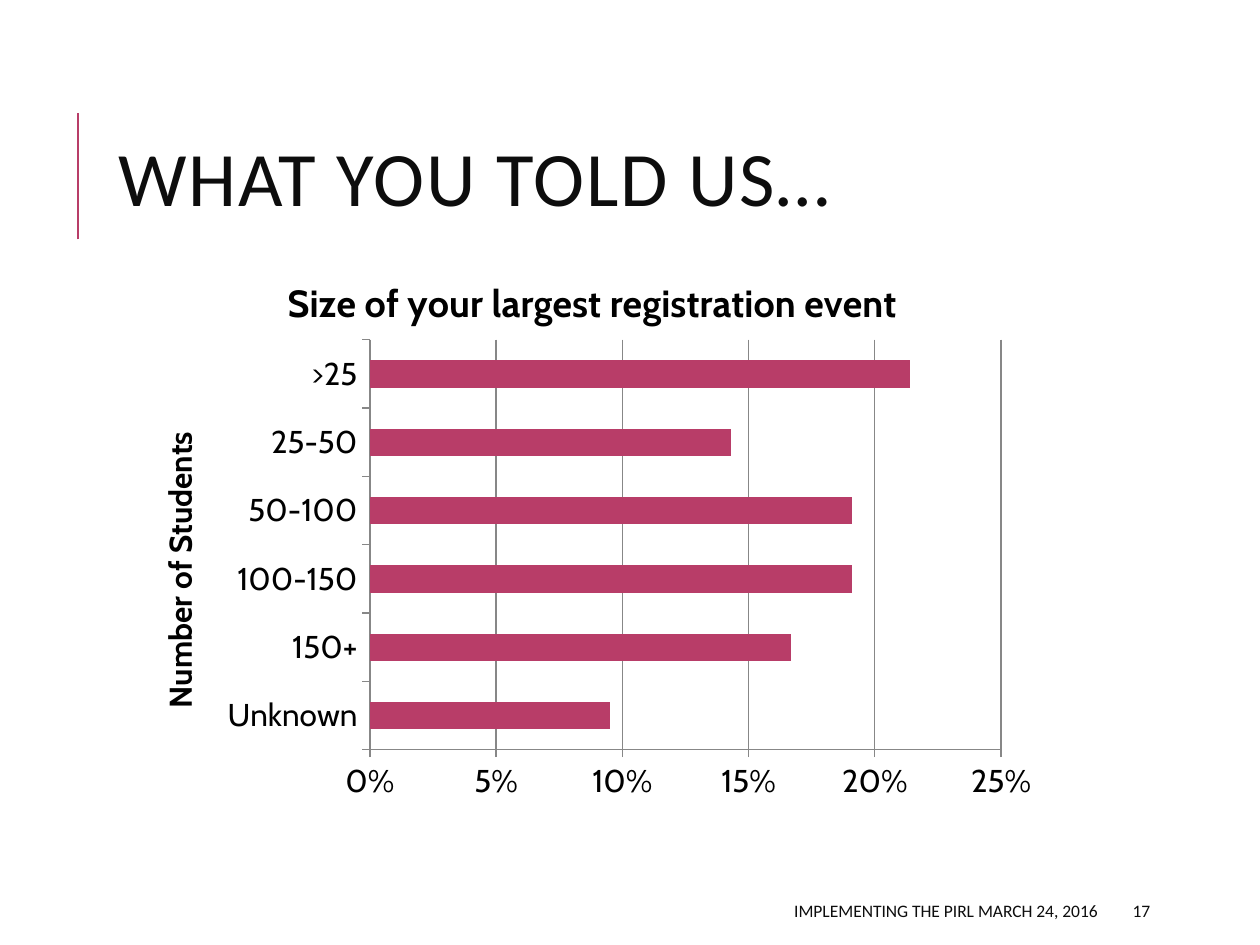
from dataclasses import dataclass

from lxml.etree import SubElement
from pptx import Presentation
from pptx.chart.data import CategoryChartData
from pptx.dml.color import RGBColor
from pptx.enum.chart import XL_CHART_TYPE as ChartType, XL_TICK_MARK as TickMark
from pptx.enum.shapes import MSO_CONNECTOR as Connector
from pptx.enum.text import MSO_ANCHOR as Anchor, MSO_AUTO_SIZE as AutoSize, PP_ALIGN as Align
from pptx.oxml import parse_xml
from pptx.oxml.ns import nsdecls, qn
from pptx.util import Inches, Pt

ACCENT, INK, BLACK, GRID = "B83D68", "0D0D0D", "000000", "878787"
TEXT_FONT, CHART_FONT = "Calibri", "Cabin"
EVENT_SIZES = {
    "Unknown": 0.095,
    "150+": 0.167,
    "100-150": 0.191,
    "50-100": 0.191,
    "25-50": 0.143,
    ">25": 0.214,
}
# Plot area as shares of the chart frame
PLOT_SHARES = {"x": 0.256, "y": 0.157, "w": 0.691, "h": 0.733}


@dataclass
class Box:
    left: float
    top: float
    width: float
    height: float

    def lengths(self) -> list:
        return [Inches(n) for n in (self.left, self.top, self.width, self.height)]


@dataclass
class FooterItem:
    text: str
    box: Box
    align: Align


FOOTER = [
    FooterItem("IMPLEMENTING THE PIRL MARCH 24, 2016", Box(3.97, 7.08, 4.84, 0.3), Align.RIGHT),
    FooterItem("17", Box(8.89, 7.08, 0.8, 0.3), Align.LEFT),
]


def color(value: str) -> RGBColor:
    return RGBColor.from_string(value)


def style_font(font, name: str, size: float, value: str, bold: bool = False) -> None:
    font.name, font.size, font.bold = name, Pt(size), bold
    font.color.rgb = color(value)


def add_title(slide, text: str) -> None:
    title = slide.shapes.title
    title.left, title.top, title.width, title.height = Box(0.84, 0.64, 7.97, 1.64).lengths()
    frame = title.text_frame
    frame.text = text
    frame.word_wrap, frame.auto_size = True, AutoSize.NONE
    frame.vertical_anchor = Anchor.MIDDLE
    paragraph = frame.paragraphs[0]
    paragraph.alignment, paragraph.line_spacing = Align.LEFT, 0.8
    run = paragraph.runs[0]
    style_font(run.font, TEXT_FONT, 44, INK)
    run.font._element.set("spc", "100")


def add_accent_line(slide) -> None:
    line = slide.shapes.add_connector(
        Connector.STRAIGHT, Inches(0.62), Inches(1.9), Inches(0.62), Inches(0.9))
    line.line.color.rgb, line.line.width = color(ACCENT), Pt(1.5)
    SubElement(line._element.spPr, qn("a:effectLst"))


def add_footer_item(slide, item: FooterItem) -> None:
    frame = slide.shapes.add_textbox(*item.box.lengths()).text_frame
    frame.word_wrap, frame.vertical_anchor = True, Anchor.MIDDLE
    frame.text = item.text
    paragraph = frame.paragraphs[0]
    paragraph.alignment = item.align
    style_font(paragraph.runs[0].font, TEXT_FONT, 10, INK)


def set_heading(owner, text: str, size: float) -> None:
    """Give a chart or an axis a bold title."""
    title = owner.chart_title if hasattr(owner, "chart_title") else owner.axis_title
    title.text_frame.text = text
    run = title.text_frame.paragraphs[0].runs[0]
    style_font(run.font, CHART_FONT, size, BLACK, bold=True)


def set_plot_layout(chart) -> None:
    plot_area = chart._chartSpace.chart.plotArea
    for layout in plot_area.findall(qn("c:layout")):
        plot_area.remove(layout)
    shares = "".join(f'<c:{key} val="{share}"/>' for key, share in PLOT_SHARES.items())
    plot_area.insert(0, parse_xml(
        f'<c:layout {nsdecls("c")}><c:manualLayout><c:layoutTarget val="inner"/>'
        f'<c:xMode val="edge"/><c:yMode val="edge"/>{shares}</c:manualLayout></c:layout>'))


def add_event_chart(slide) -> None:
    data = CategoryChartData(number_format="0%")
    data.categories = list(EVENT_SIZES)
    data.add_series("Series 1", list(EVENT_SIZES.values()))
    chart = slide.shapes.add_chart(
        ChartType.BAR_CLUSTERED, *Box(1.08, 2, 7.25, 4.44).lengths(), data).chart
    style_font(chart.font, CHART_FONT, 18, BLACK)
    chart.has_legend = False
    set_heading(chart, "Size of your largest registration event", 21.6)
    set_plot_layout(chart)

    # Bars
    plot = chart.plots[0]
    plot.gap_width, plot.vary_by_categories = 150, False
    fill = plot.series[0].format.fill
    fill.solid()
    fill.fore_color.rgb = color(ACCENT)

    # Axes and gridlines
    categories, values = chart.category_axis, chart.value_axis
    set_heading(categories, "Number of Students", 18)
    values.minimum_scale, values.maximum_scale, values.major_unit = 0, 0.25, 0.05
    values.tick_labels.number_format = "0%"
    values.tick_labels.number_format_is_linked = False
    values.has_major_gridlines, categories.has_major_gridlines = True, False
    for axis in (categories, values):
        axis.major_tick_mark, axis.minor_tick_mark = TickMark.OUTSIDE, TickMark.NONE
    for part in (categories, values, values.major_gridlines):
        part.format.line.color.rgb, part.format.line.width = color(GRID), Pt(0.75)


def main() -> None:
    presentation = Presentation()
    presentation.slide_width, presentation.slide_height = Inches(10), Inches(7.5)
    slide = presentation.slides.add_slide(presentation.slide_layouts.get_by_name("Title Only"))
    add_accent_line(slide)
    add_title(slide, "WHAT YOU TOLD US…")
    add_event_chart(slide)
    for item in FOOTER:
        add_footer_item(slide, item)
    presentation.save("out.pptx")


if __name__ == "__main__":
    main()
